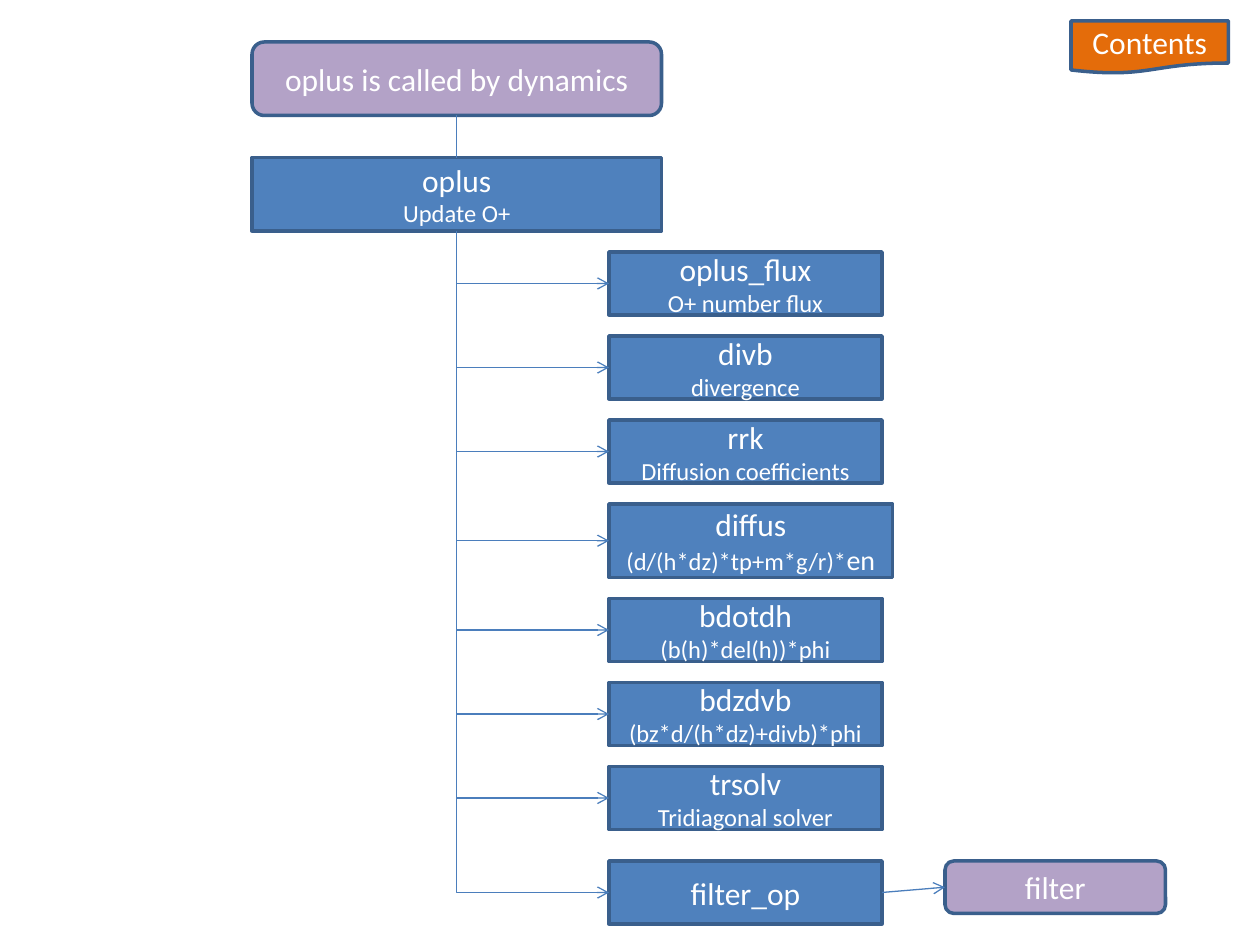
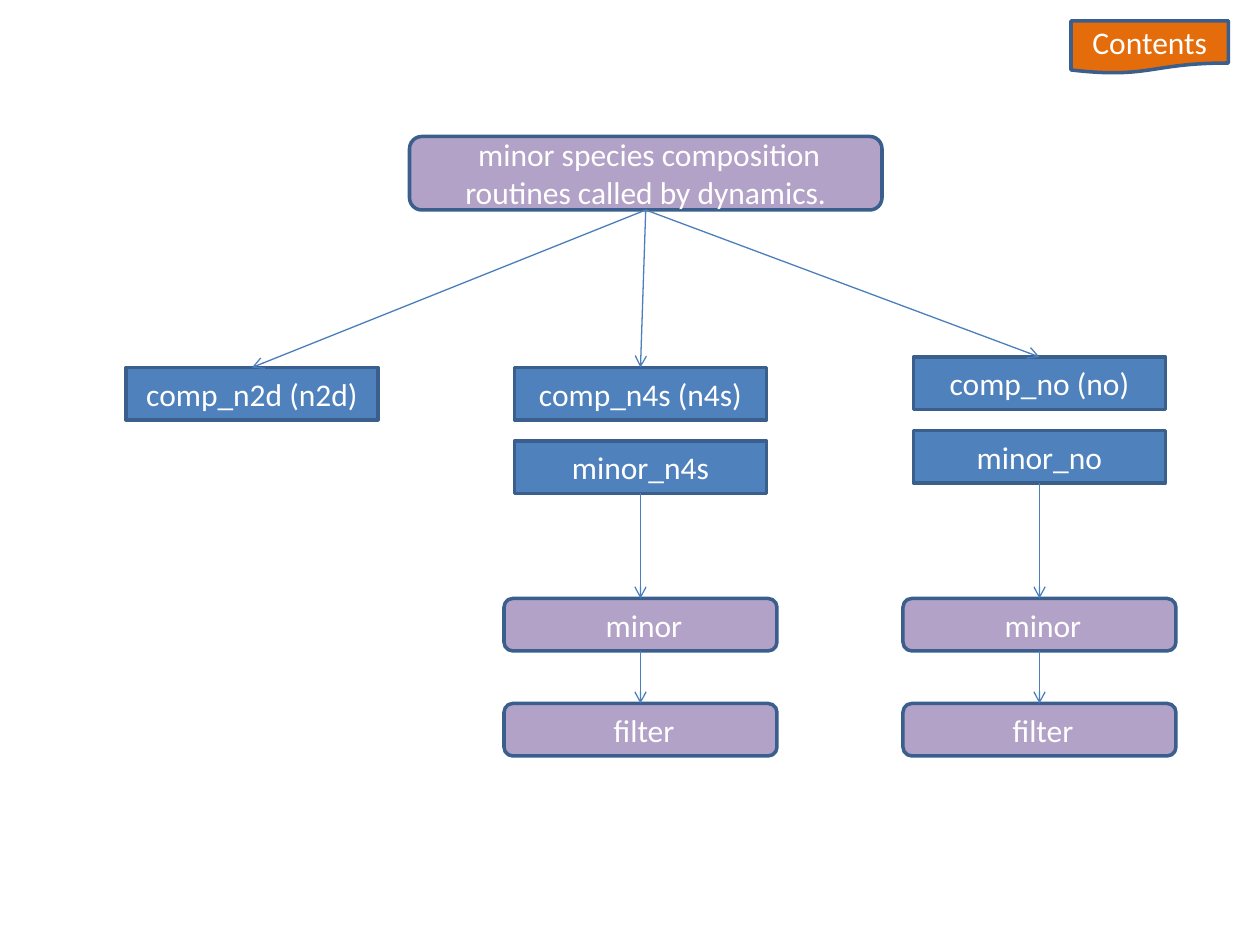
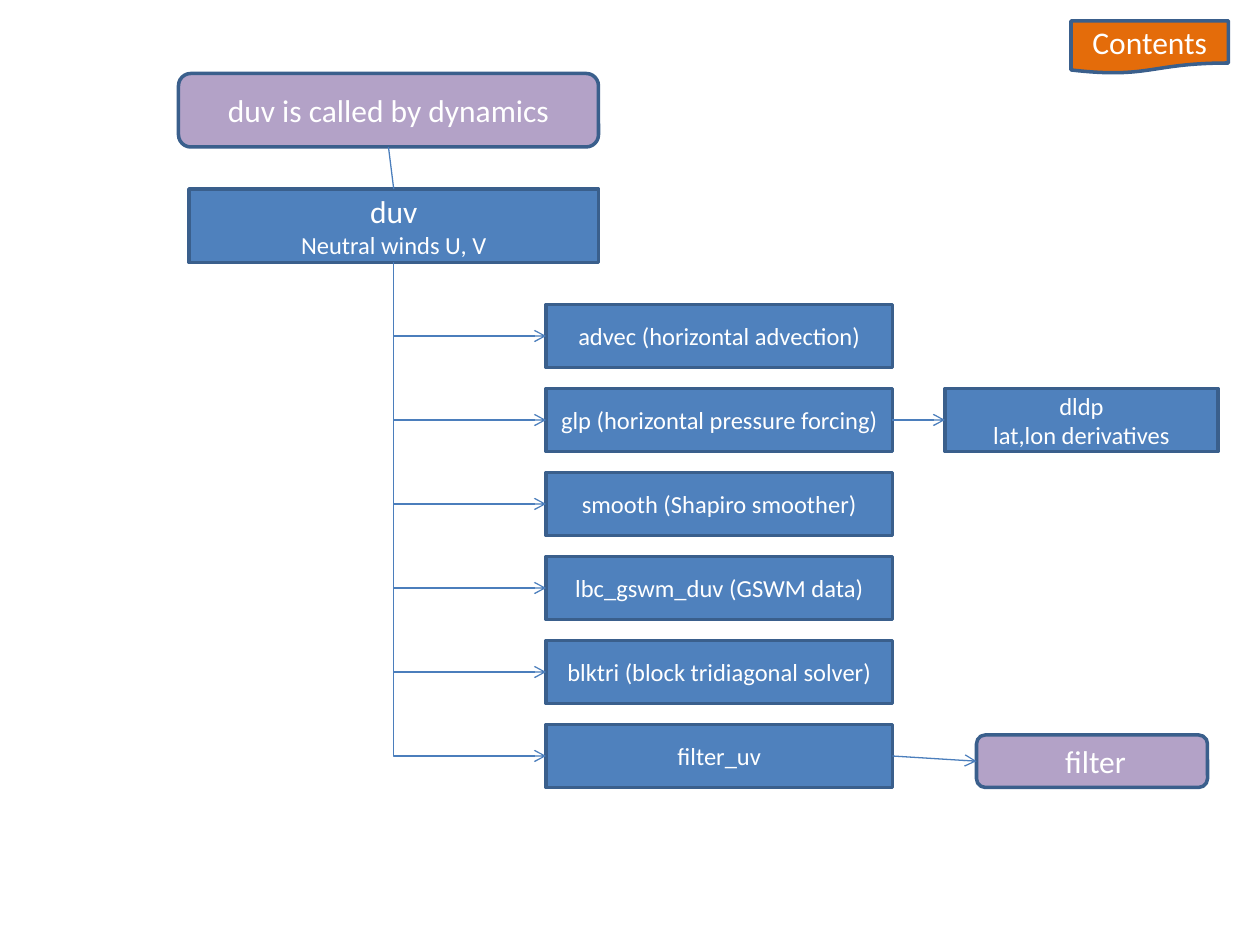
from pptx import Presentation
from pptx.dml.color import RGBColor
from pptx.enum.shapes import MSO_CONNECTOR, MSO_SHAPE
from pptx.enum.text import MSO_ANCHOR, PP_ALIGN
from pptx.oxml.ns import qn
from pptx.oxml.xmlchemy import OxmlElement
from pptx.util import Pt

# Shared look
BLUE = RGBColor(0x4F, 0x81, 0xBD)
PURPLE = RGBColor(0xB3, 0xA2, 0xC7)
ORANGE = RGBColor(0xE4, 0x6C, 0x0A)
OUTLINE = RGBColor(0x3A, 0x5F, 0x8C)
ARROW = RGBColor(0x4B, 0x7E, 0xBC)
WHITE = RGBColor(0xFF, 0xFF, 0xFF)
FONT = "Calibri"
NAME_SIZE, NOTE_SIZE = 18, 14
GAP = 12

RECTANGLE = MSO_SHAPE.RECTANGLE
ROUNDED = MSO_SHAPE.ROUNDED_RECTANGLE
PROCESS = MSO_SHAPE.FLOWCHART_ALTERNATE_PROCESS
DOCUMENT = MSO_SHAPE.FLOWCHART_DOCUMENT
STRAIGHT, ELBOW = MSO_CONNECTOR.STRAIGHT, MSO_CONNECTOR.ELBOW
CENTER, MIDDLE = PP_ALIGN.CENTER, MSO_ANCHOR.MIDDLE
TOP, LEFT, BOTTOM, RIGHT = range(4)


# Boxes
def add_box(slide, kind, fill, place, lines, sizes=(NAME_SIZE, NOTE_SIZE)):
    shape = slide.shapes.add_shape(kind, *map(Pt, place))
    shape.shadow.inherit = False
    shape.fill.solid()
    shape.fill.fore_color.rgb = fill
    shape.line.color.rgb = OUTLINE
    shape.line.width = Pt(2)
    frame = shape.text_frame
    frame.word_wrap = True
    frame.vertical_anchor = MIDDLE
    frame.text = "\n".join(lines)
    for paragraph, size in zip(frame.paragraphs, sizes):
        paragraph.alignment = CENTER
        paragraph.font.name = FONT
        paragraph.font.size = Pt(size)
        paragraph.font.color.rgb = WHITE
    return shape


def add_routine(slide, place, *lines, sizes=(NAME_SIZE, NOTE_SIZE)):
    return add_box(slide, RECTANGLE, BLUE, place, lines, sizes)


def add_linked(slide, place, *lines, kind=PROCESS):
    return add_box(slide, kind, PURPLE, place, lines, (NAME_SIZE, NAME_SIZE))


# Connectors
def connect(slide, kind, start, start_side, end, end_side, arrow=True):
    connector = slide.shapes.add_connector(kind, 0, 0, 0, 0)
    connector.begin_connect(start, start_side)
    connector.end_connect(end, end_side)
    connector.line.color.rgb = ARROW
    connector.line.width = Pt(0.75)
    properties = connector._element.spPr
    if arrow:
        tail = OxmlElement("a:tailEnd")
        tail.set("type", "arrow")
        properties.find(qn("a:ln")).append(tail)
    properties.append(OxmlElement("a:effectLst"))
    return connector


def add_branch(slide, parent, child):
    """Run down from the parent, then right to the child."""
    connector = connect(slide, ELBOW, parent, BOTTOM, child, LEFT)
    start_x, start_y = parent.left + parent.width // 2, parent.top + parent.height
    across = child.left - start_x
    down = child.top + child.height // 2 - start_y
    # The one-bend preset is turned a quarter, so its width is the drop
    connector.left = start_x + (across - down) // 2
    connector.top = start_y + (down - across) // 2
    connector.width, connector.height = down, across
    properties = connector._element.spPr
    properties.find(qn("a:prstGeom")).set("prst", "bentConnector2")
    properties.xfrm.set("rot", "16200000")
    properties.xfrm.set("flipH", "1")


def add_slide(presentation):
    slide = presentation.slides.add_slide(presentation.slide_layouts[6])
    add_box(slide, DOCUMENT, ORANGE, (612, 12, 90, 30), ["Contents"])
    return slide


# Slides
def build_oplus(presentation):
    slide = add_slide(presentation)
    caller = add_linked(slide, (144, 24, 234, 42), "oplus is called by dynamics")
    oplus = add_routine(slide, (144, 90, 234, 42), "oplus", "Update O+")
    connect(slide, STRAIGHT, caller, BOTTOM, oplus, TOP, arrow=False)

    routines = [
        ("oplus_flux", "O+ number flux"),
        ("divb", "divergence"),
        ("rrk", "Diffusion coefficients"),
        ("diffus", "(d/(h*dz)*tp+m*g/r)*"),
        ("bdotdh", "(b(h)*del(h))*phi"),
        ("bdzdvb", "(bz*d/(h*dz)+divb)*phi"),
        ("trsolv", "Tridiagonal solver"),
    ]
    top = 144
    for name, note in routines:
        width, height = (162, 42) if name == "diffus" else (156, 36)
        routine = add_routine(slide, (348, top, width, height), name, note)
        if name == "diffus":
            factor = routine.text_frame.paragraphs[1].add_run()
            factor.text = "en"
            factor.font.size = Pt(16)
        add_branch(slide, oplus, routine)
        top += height + GAP

    filter_op = add_routine(slide, (348, 492, 156, 36), "filter_op")
    add_branch(slide, oplus, filter_op)
    smoothing = add_linked(slide, (540, 492, 126, 30), "filter")
    connect(slide, STRAIGHT, filter_op, RIGHT, smoothing, LEFT)


def build_minor_species(presentation):
    slide = add_slide(presentation)
    caller = add_linked(slide, (234, 78, 270, 42),
                        " minor species composition", "routines called by dynamics.")
    species = [
        (72, 210, "comp_n2d (n2d)", None),
        (294, 210, "comp_n4s (n4s)", "minor_n4s"),
        (522, 204, "comp_no (no)", "minor_no"),
    ]
    for left, top, composition, minor_name in species:
        first = add_routine(slide, (left, top, 144, 30), composition)
        connect(slide, STRAIGHT, caller, BOTTOM, first, TOP)
        if minor_name:
            previous = add_routine(slide, (left, top + 30 + GAP, 144, 30), minor_name)
            for step_top, step_name in ((342, " minor"), (402, " filter")):
                step = add_linked(slide, (left - 6, step_top, 156, 30), step_name)
                connect(slide, STRAIGHT, previous, BOTTOM, step, TOP)
                previous = step


def build_duv(presentation):
    slide = add_slide(presentation)
    caller = add_linked(slide, (102, 42, 240, 42), "duv is called by dynamics",
                        kind=ROUNDED)
    duv = add_routine(slide, (108, 108, 234, 42), "duv", "Neutral winds U, V")
    connect(slide, STRAIGHT, caller, BOTTOM, duv, TOP, arrow=False)

    names = [
        "advec (horizontal advection)",
        "glp (horizontal pressure forcing)",
        "smooth (Shapiro smoother)",
        "lbc_gswm_duv (GSWM data)",
        "blktri (block tridiagonal solver)",
        "filter_uv",
    ]
    small = (NOTE_SIZE, NOTE_SIZE)
    routines = []
    for row, name in enumerate(names):
        place = (312, 174 + row * (36 + GAP), 198, 36)
        routine = add_routine(slide, place, name, sizes=small)
        add_branch(slide, duv, routine)
        routines.append(routine)

    derivatives = add_routine(slide, (540, 222, 156, 36),
                              "dldp", "lat,lon derivatives", sizes=small)
    connect(slide, STRAIGHT, routines[1], RIGHT, derivatives, LEFT)
    smoothing = add_linked(slide, (558, 420, 132, 30), " filter")
    connect(slide, STRAIGHT, routines[-1], RIGHT, smoothing, LEFT)


def main():
    presentation = Presentation()
    presentation.slide_width = Pt(720)
    presentation.slide_height = Pt(540)
    build_oplus(presentation)
    build_minor_species(presentation)
    build_duv(presentation)
    presentation.save("out.pptx")


if __name__ == "__main__":
    main()
